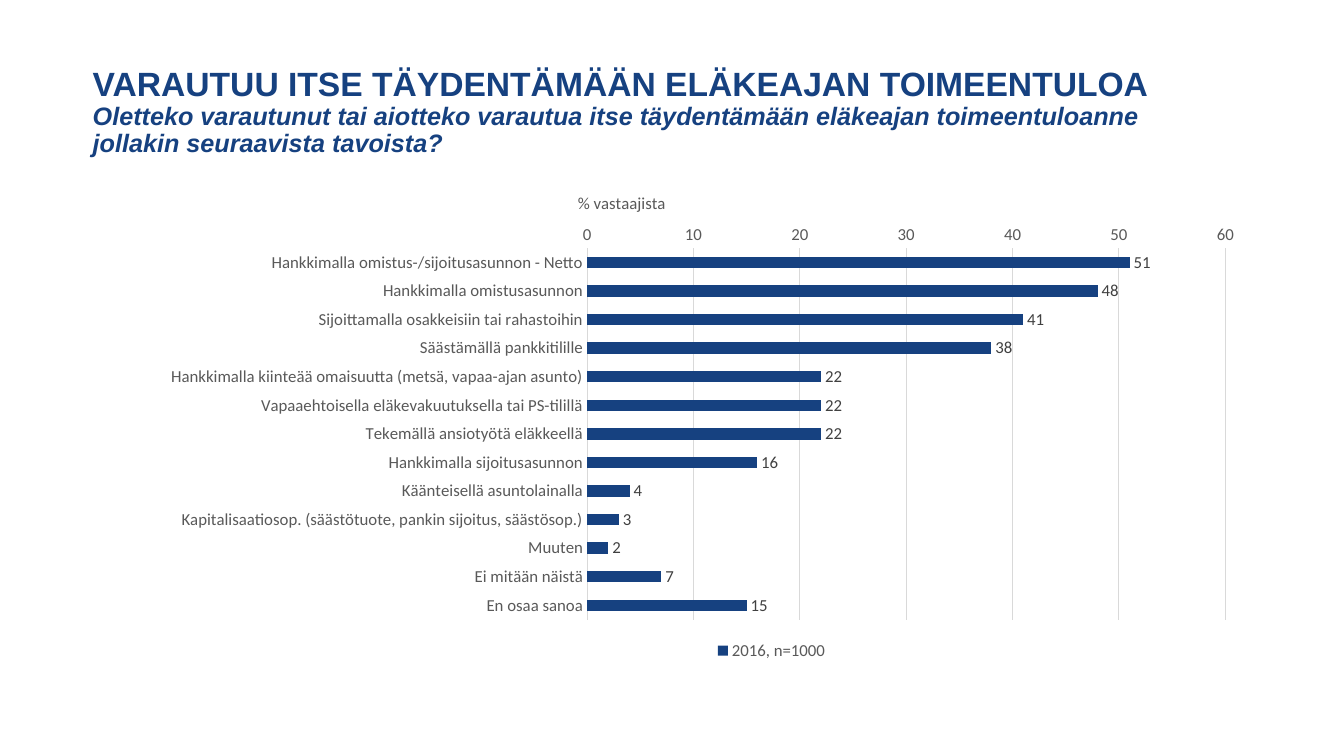
import pptx
import pptx.chart.data
import pptx.dml.color
import pptx.enum.chart
import pptx.enum.text
import pptx.util
from lxml import etree
from pptx.oxml.ns import qn

WIDTH, HEIGHT = pptx.util.Inches(13.33), pptx.util.Inches(7.5)
NAVY, GREY, DARK, PALE = "164180", "595959", "404040", "D9D9D9"

TITLE = "VARAUTUU ITSE TÄYDENTÄMÄÄN ELÄKEAJAN TOIMEENTULOA"
QUESTION = ("Oletteko varautunut tai aiotteko varautua itse täydentämään "
            "eläkeajan toimeentuloanne jollakin seuraavista tavoista?")
ANSWERS = [
    ("Hankkimalla omistus-/sijoitusasunnon - Netto", 51),
    ("Hankkimalla omistusasunnon", 48),
    ("Sijoittamalla osakkeisiin tai rahastoihin", 41),
    ("Säästämällä pankkitilille", 38),
    ("Hankkimalla kiinteää omaisuutta (metsä, vapaa-ajan asunto)", 22),
    ("Vapaaehtoisella eläkevakuutuksella tai PS-tilillä", 22),
    ("Tekemällä ansiotyötä eläkkeellä", 22),
    ("Hankkimalla sijoitusasunnon", 16),
    ("Käänteisellä asuntolainalla", 4),
    ("Kapitalisaatiosop. (säästötuote, pankin sijoitus, säästösop.)", 3),
    ("Muuten", 2),
    ("Ei mitään näistä", 7),
    ("En osaa sanoa", 15),
]


def rgb(color):
    return pptx.dml.color.RGBColor.from_string(color)


def box(left, top, width, height):
    """Turn shares of the slide into lengths."""
    return (int(left * WIDTH), int(top * HEIGHT),
            int(width * WIDTH), int(height * HEIGHT))


def set_all(target, **values):
    for name, value in values.items():
        setattr(target, name, value)


def style_font(font, size, color, name="Calibri", bold=False, italic=False):
    set_all(font, size=pptx.util.Pt(size), name=name, bold=bold, italic=italic)
    font.color.rgb = rgb(color)


def style_line(line, color):
    line.color.rgb = rgb(color)
    line.width = pptx.util.Pt(0.75)


def place_part(part, index, **shares):
    """Give a chart part a manual layout in shares of the chart."""
    for old in part.findall(qn("c:layout")):
        part.remove(old)
    layout = etree.Element(qn("c:layout"))
    manual = etree.SubElement(layout, qn("c:manualLayout"))
    for name, value in shares.items():
        etree.SubElement(manual, qn(f"c:{name}")).set("val", str(value))
    part.insert(index, layout)


def add_title(s):
    sp = s.shapes.title
    sp.left, sp.top, sp.width, sp.height = box(0.0615, 0.052, 0.8627, 0.1933)
    tf = sp.text_frame
    set_all(tf, word_wrap=True, auto_size=pptx.enum.text.MSO_AUTO_SIZE.NONE,
            vertical_anchor=pptx.enum.text.MSO_ANCHOR.MIDDLE)
    p = tf.paragraphs[0]
    set_all(p, alignment=pptx.enum.text.PP_ALIGN.LEFT, line_spacing=0.9)
    r = p.add_run()
    r.text = TITLE
    style_font(r.font, 24, NAVY, "Arial", bold=True)
    p.add_line_break()
    r = p.add_run()
    r.text = QUESTION
    style_font(r.font, 18, NAVY, "Arial", bold=True, italic=True)


def style_axes(chart):
    tick = pptx.enum.chart.XL_TICK_MARK.NONE
    for axis in (chart.category_axis, chart.value_axis):
        set_all(axis, major_tick_mark=tick, minor_tick_mark=tick)
        style_font(axis.tick_labels.font, 12, GREY)
    chart.category_axis.reverse_order = True
    style_line(chart.category_axis.format.line, PALE)
    set_all(chart.value_axis, minimum_scale=0, maximum_scale=60, major_unit=10)
    chart.value_axis.format.line.fill.background()
    style_line(chart.value_axis.major_gridlines.format.line, PALE)


def style_bars(plot):
    set_all(plot, gap_width=150, vary_by_categories=False)
    series = plot.series[0]
    series.format.fill.solid()
    series.format.fill.fore_color.rgb = rgb(NAVY)
    labels = series.data_labels
    set_all(labels, show_value=True,
            position=pptx.enum.chart.XL_LABEL_POSITION.OUTSIDE_END)
    style_font(labels.font, 12, DARK)


def style_captions(chart):
    chart.has_title = True
    p = chart.chart_title.text_frame.paragraphs[0]
    r = p.add_run()
    r.text = "% vastaajista"
    style_font(r.font, 12, GREY)
    chart.has_legend = True
    set_all(chart.legend, include_in_layout=False,
            position=pptx.enum.chart.XL_LEGEND_POSITION.BOTTOM)
    style_font(chart.legend.font, 12, GREY)


def add_answer_chart(s):
    data = pptx.chart.data.CategoryChartData(number_format="0")
    data.categories = [answer for answer, _ in ANSWERS]
    data.add_series("2016, n=1000", [share for _, share in ANSWERS])
    chart = s.shapes.add_chart(
        pptx.enum.chart.XL_CHART_TYPE.BAR_CLUSTERED,
        *box(0.0158, 0.236, 0.9152, 0.6507), data).chart
    style_font(chart.font, 10, "000000")
    style_axes(chart)
    style_bars(chart.plots[0])
    style_captions(chart)
    root = chart.element.find(qn("c:chart"))
    place_part(root.find(qn("c:plotArea")), 0, layoutTarget="inner",
               xMode="edge", yMode="edge", x=0.46, y=0.142, w=0.519, h=0.755)
    place_part(root.find(qn("c:title")), 1,
               xMode="edge", yMode="edge", x=0.45, y=0.02)
    place_part(root.find(qn("c:legend")), 1,
               xMode="edge", yMode="edge", x=0.56, y=0.93, w=0.1, h=0.06)


def main():
    prs = pptx.Presentation()
    set_all(prs, slide_width=WIDTH, slide_height=HEIGHT)
    s = prs.slides.add_slide(prs.slide_layouts.get_by_name("Title Only"))
    add_title(s)
    add_answer_chart(s)
    prs.save("out.pptx")


if __name__ == "__main__":
    main()
